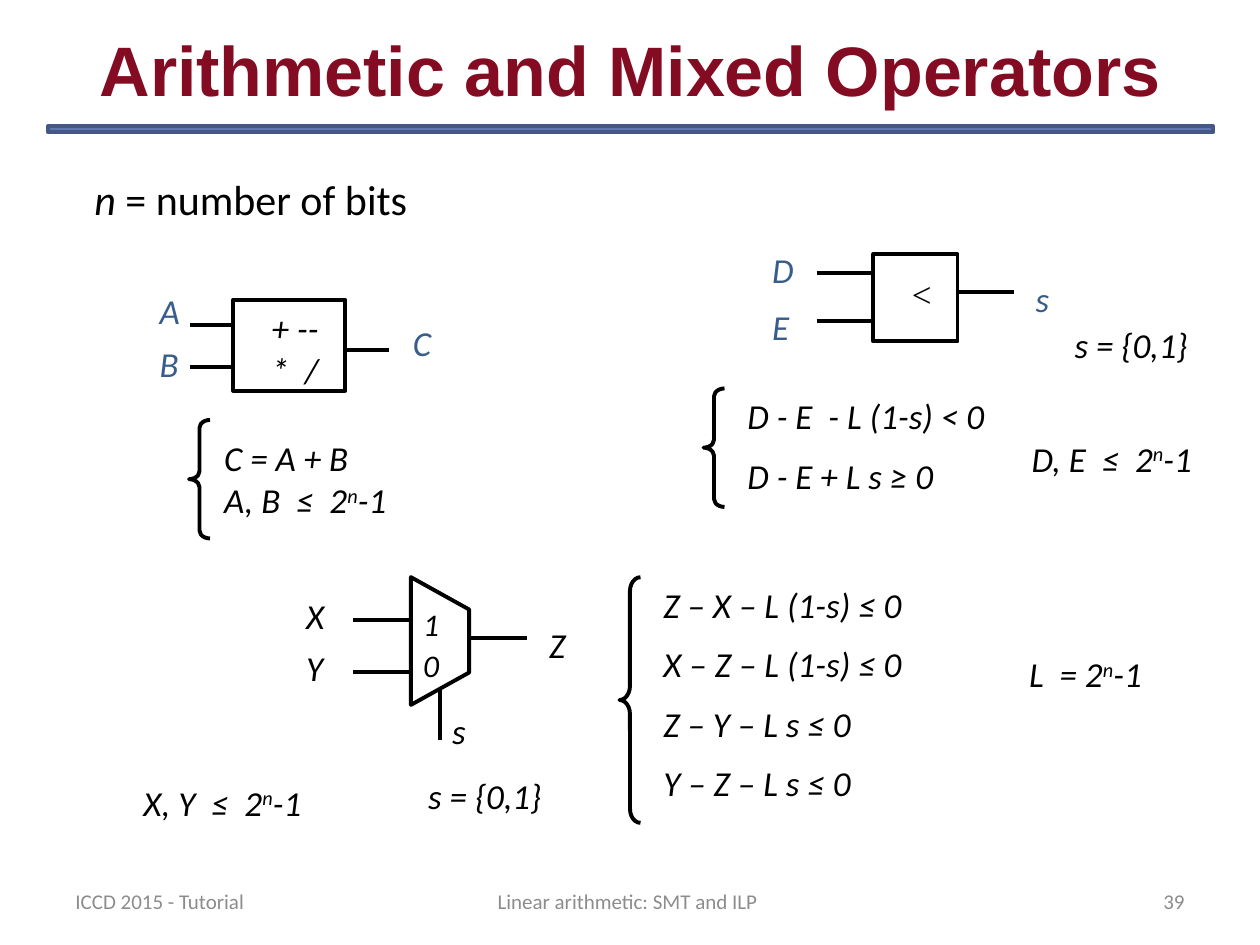
from lxml.etree import SubElement
from pptx import Presentation
from pptx.dml.color import RGBColor
from pptx.enum.shapes import MSO_CONNECTOR, MSO_SHAPE
from pptx.enum.text import MSO_ANCHOR, PP_ALIGN
from pptx.oxml.ns import qn
from pptx.util import Pt

BLACK = RGBColor(0x00, 0x00, 0x00)
LABEL_BLUE = RGBColor(0x38, 0x5D, 0x8A)
MAROON = RGBColor(0x84, 0x0C, 0x22)
RULE_FILL = RGBColor(0x60, 0x76, 0xB4)
RULE_LINE = RGBColor(0x47, 0x57, 0x85)
GREY = RGBColor(0x8C, 0x8C, 0x8C)
STROKE = 2.25


def add_text(s, x, y, w, h, lines, size=20, color=BLACK, font="Calibri", italic=True,
             bold=False, align=PP_ALIGN.LEFT, anchor=MSO_ANCHOR.TOP, gap=0, wrap=True):
    """Add a text box with one paragraph per line; text between carets is superscript."""
    tf = s.shapes.add_textbox(Pt(x), Pt(y), Pt(w), Pt(h)).text_frame
    tf.word_wrap = wrap
    tf.vertical_anchor = anchor
    for i, line in enumerate(lines):
        p = tf.paragraphs[0] if i == 0 else tf.add_paragraph()
        p.alignment = align
        p.space_before = Pt(gap if i else 0)
        f = p.font
        f.name, f.size, f.italic, f.bold = font, Pt(size), italic, bold
        f.color.rgb = color
        for k, part in enumerate(line.split("^")):
            r = p.add_run()
            r.text = part
            if k % 2:
                r.font._element.set("baseline", "30000")
    return tf


def add_label(s, x, y, text, w=25, **style):
    add_text(s, x, y, w, 31.5, [text], wrap=False, **style)


def add_wire(s, x1, y1, x2, y2):
    c = s.shapes.add_connector(MSO_CONNECTOR.STRAIGHT, Pt(x1), Pt(y1), Pt(x2), Pt(y2))
    c.line.color.rgb = BLACK
    c.line.width = Pt(STROKE)
    SubElement(c._element.spPr, qn("a:effectLst"))


def outline(sp):
    sp.shadow.inherit = False
    sp.fill.background()
    sp.line.color.rgb = BLACK
    sp.line.width = Pt(STROKE)


def add_box(s, x, y, w, h):
    outline(s.shapes.add_shape(MSO_SHAPE.RECTANGLE, Pt(x), Pt(y), Pt(w), Pt(h)))


def add_brace(s, x, y, h, curl):
    sp = s.shapes.add_shape(MSO_SHAPE.LEFT_BRACE, Pt(x), Pt(y), Pt(12), Pt(h))
    sp.adjustments[0] = curl
    sp.adjustments[1] = 0.5
    outline(sp)


def add_ports(s, x, y, wires, labels, color):
    """Draw wires and pin names, both given relative to x, y."""
    for x1, y1, x2, y2 in wires:
        add_wire(s, x + x1, y + y1, x + x2, y + y2)
    for text, dx, dy in labels:
        add_label(s, x + dx, y + dy, text, color=color)


def add_adder(s, x, y):
    add_box(s, x + 49, y + 9.4, 64.2, 51.8)
    add_text(s, x + 64, y + 9.4, 54.7, 55.4, ["+ --", "*  /"])
    add_ports(s, x, y,
              [(24.5, 23.8, 49, 23.8), (24.5, 47.5, 49, 47.5), (113.4, 38.2, 138, 38.2)],
              [("A", 0, 0), ("B", 0, 30.2), ("C", 144.7, 18)], LABEL_BLUE)


def add_comparator(s, x, y):
    add_box(s, x + 64.8, y + 7.2, 48.2, 49.7)
    add_label(s, x + 78.5, y + 13.7, "<", w=28, font="Times New Roman")
    add_ports(s, x, y,
              [(32.4, 18, 64.8, 18), (32.4, 45.4, 64.8, 45.4), (113, 28.8, 145.4, 28.8)],
              [("D", 0, 0), ("E", 0, 33.1), ("s", 150.5, 16.6)], LABEL_BLUE)


def add_multiplexer(s, x, y):
    left, right, height, slope = 67, 100.3, 73, 18.5
    corners = [(left, 0), (right, slope), (right, height - slope), (left, height)]
    pts = [(Pt(x + dx), Pt(y + dy)) for dx, dy in corners]
    fb = s.shapes.build_freeform(*pts[0])
    fb.add_line_segments(pts[1:], close=True)
    outline(fb.convert_to_shape())
    for text, dy in (("1", 12.2), ("0", 36)):
        add_label(s, x + left, y + dy, text, size=18)
    add_ports(s, x, y,
              [(33.8, 24.5, left, 24.5), (33.8, 54, left, 54),
               (right, 34.6, 133.2, 34.6), (83.6, 92.9, 83.6, 63.8)],
              [("X", 0, 6.5), ("Y", 0, 36), ("Z", 139, 23), ("s", 83.5, 72)], BLACK)


def add_constraints(s, x, y, w, h, lines, curl, inset=18, drop=0, gap=10):
    """Draw a left brace of height h with its lines beside it."""
    add_brace(s, x, y, h, curl)
    add_text(s, x + inset, y + drop, w, h - 2 * drop, lines, gap=gap)


def add_header(s, x, y, w, title):
    add_text(s, x, y, w, 66.2, [title], size=40, color=MAROON, font="Arial", italic=False,
             bold=True, align=PP_ALIGN.CENTER, anchor=MSO_ANCHOR.MIDDLE)
    rule = s.shapes.add_shape(MSO_SHAPE.RECTANGLE, Pt(x + 21.3), Pt(y + 66.2),
                              Pt(w - 42), Pt(3.6))
    rule.shadow.inherit = False
    rule.fill.solid()
    rule.fill.fore_color.rgb = RULE_FILL
    rule.line.color.rgb = RULE_LINE
    rule.line.width = Pt(2)


def add_footer(s, y):
    for x, w, text, align in ((36, 168, "ICCD 2015 - Tutorial", PP_ALIGN.LEFT),
                              (246, 228, "Linear arithmetic: SMT and ILP ", PP_ALIGN.CENTER),
                              (516, 168, "39", PP_ALIGN.RIGHT)):
        add_text(s, x, y, w, 28.8, [text], size=12, color=GREY, italic=False,
                 align=align, anchor=MSO_ANCHOR.MIDDLE)


def main():
    prs = Presentation()
    prs.slide_width, prs.slide_height = Pt(720), Pt(540)
    s = prs.slides.add_slide(prs.slide_layouts[6])

    add_header(s, 6, 5.8, 708, "Arithmetic and Mixed Operators")
    tf = add_text(s, 46.8, 95.8, 195, 36, ["n"], size=24)
    r = tf.paragraphs[0].add_run()
    r.text = " = number of bits"
    r.font.italic = False

    add_adder(s, 84.2, 162)
    add_constraints(s, 108, 240, 109, 67.7, ["C = A + B", "A, B  ≤  2^n^-1"],
                    0.375, inset=13, drop=6, gap=0)

    add_comparator(s, 434.2, 138.2)
    add_constraints(s, 402, 222, 186, 67.7, ["D - E  - L (1-s) < 0", "D - E + L s ≥ 0"], 0.375)

    add_multiplexer(s, 167.8, 329.8)
    add_constraints(s, 354, 329.8, 180, 140.4,
                    ["Z – X – L (1-s) ≤ 0", "X – Z – L (1-s) ≤ 0",
                     "Z – Y – L s ≤ 0", "Y – Z – L s ≤ 0"], 0.667)

    for x, y, w, text in ((582.5, 246.2, 113, "D, E  ≤  2^n^-1"),
                          (74.9, 442.8, 107, "X, Y  ≤  2^n^-1"),
                          (607, 181.4, 81.4, "s = {0,1}"),
                          (237.6, 439.2, 81.4, "s = {0,1}"),
                          (581, 369.4, 80.6, "L  = 2^n^-1")):
        add_label(s, x, y, text, w=w)

    add_footer(s, 500.4)
    prs.save("out.pptx")


if __name__ == "__main__":
    main()
